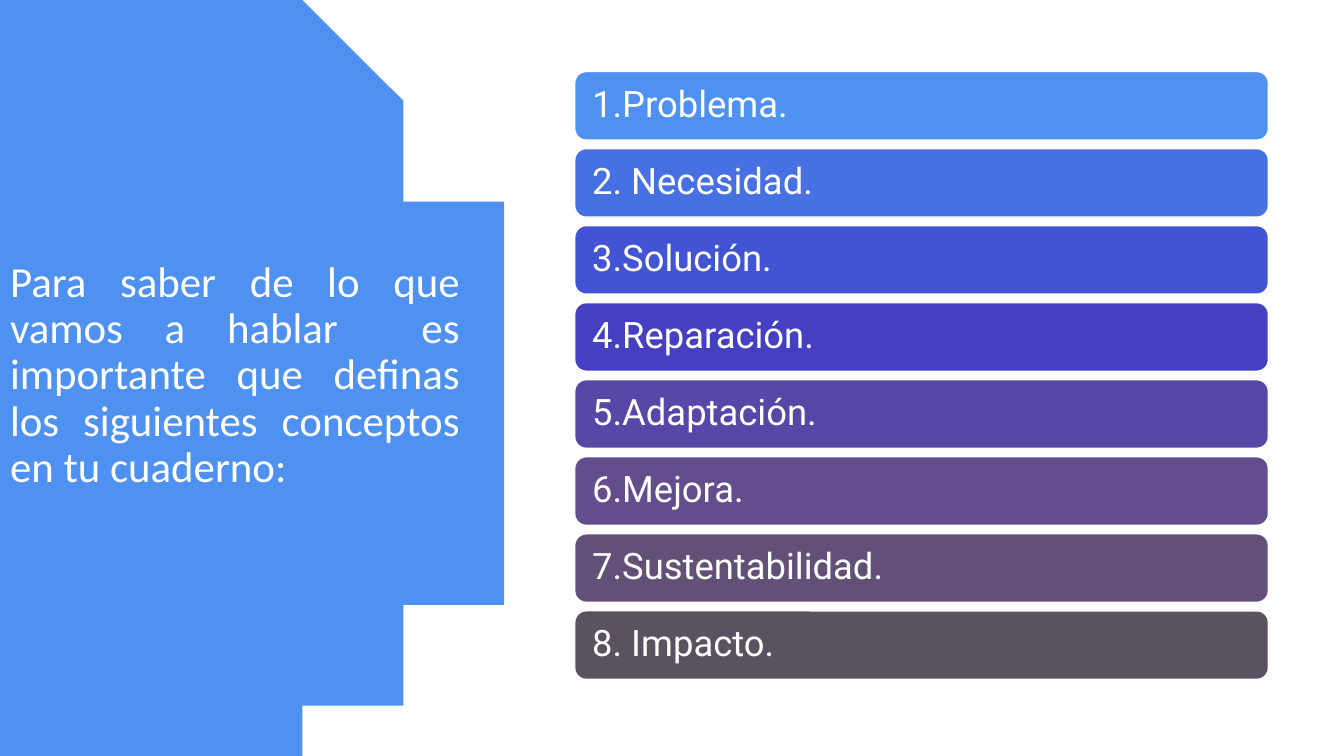
import math

from pptx import Presentation
from pptx import util as u
from pptx.dml.color import RGBColor
from pptx.enum import shapes, text

COLORS = {
    "white": "FFFFFF",
    "sky": "4E91F0",
    "blue": "4770E3",
    "royal": "4253D4",
    "indigo": "4540C2",
    "violet": "5947A7",
    "purple": "634D8D",
    "plum": "635076",
    "slate": "5B5260",
}

CONCEPTS = [
    ("1.Problema.", "sky"),
    ("2. Necesidad.", "blue"),
    ("3.Solución.", "royal"),
    ("4.Reparación.", "indigo"),
    ("5.Adaptación.", "violet"),
    ("6.Mejora.", "purple"),
    ("7.Sustentabilidad.", "plum"),
    ("8. Impacto.", "slate"),
]


class ConceptSlide:
    title_font = {"name": "Calibri", "size": u.Pt(30.6), "bold": False}
    bar_font = {"name": "Roboto", "size": u.Pt(26)}

    def __init__(self, prs):
        self.slide = prs.slides.add_slide(prs.slide_layouts[5])

    def color(self, name):
        return RGBColor.from_string(COLORS[name])

    def paint(self, sp, fill, line=None):
        sp.shadow.inherit = False
        sp.fill.solid()
        sp.fill.fore_color.rgb = self.color(fill)
        if line:
            sp.line.color.rgb = self.color(line)
            sp.line.width = u.Pt(1)
        else:
            sp.line.fill.background()

    def label(self, sp, words, font, align, frame):
        tf = sp.text_frame
        frame = {
            "word_wrap": True,
            "auto_size": text.MSO_AUTO_SIZE.NONE,
            "vertical_anchor": text.MSO_ANCHOR.MIDDLE,
            **frame,
        }
        for key, value in frame.items():
            setattr(tf, key, value)
        p = tf.paragraphs[0]
        p.alignment = align
        p.line_spacing = 0.9
        r = p.add_run()
        r.text = words
        for key, value in font.items():
            setattr(r.font, key, value)
        r.font.color.rgb = self.color("white")

    def disc(self, center_x, center_y, radius, steps=120):
        limit = math.asin(center_y / radius)
        angles = [limit * (2 * i / steps - 1) for i in range(steps + 1)]
        arc = [
            (center_x + radius * math.cos(a), center_y + radius * math.sin(a))
            for a in angles
        ]
        builder = self.slide.shapes.build_freeform(0, 0, scale=u.Inches(1))
        builder.add_line_segments(arc + [(0, 2 * center_y)], close=True)
        self.paint(builder.convert_to_shape(), "sky")

    def title(self, words, left, top, width, height):
        sp = self.slide.shapes.title
        box = {"left": left, "top": top, "width": width, "height": height}
        for key, value in box.items():
            setattr(sp, key, u.Inches(value))
        self.label(sp, words, self.title_font, text.PP_ALIGN.JUSTIFY, {})
        tree = self.slide.shapes.element
        tree.append(sp.element)

    def bar(self, words, fill, left, top, width, height):
        sp = self.slide.shapes.add_shape(
            shapes.MSO_SHAPE.ROUNDED_RECTANGLE,
            *map(u.Inches, (left, top, width, height)),
        )
        self.paint(sp, fill, "white")
        frame = {"margin_left": u.Inches(0.14), "margin_right": u.Inches(0.14)}
        self.label(sp, words, self.bar_font, text.PP_ALIGN.LEFT, frame)


def main():
    prs = Presentation()
    prs.slide_width = u.Inches(13.33)
    prs.slide_height = u.Inches(7.5)
    s = ConceptSlide(prs)
    s.disc(0.53, 3.75, 4.4)
    s.title(
        "Para saber de lo que vamos a hablar  es importante que definas "
        "los siguientes conceptos en tu cuaderno:",
        0, 1.95, 4.66, 3.56,
    )
    first_top, last_top = 0.71, 6.06
    pitch = (last_top - first_top) / (len(CONCEPTS) - 1)
    for i, (words, fill) in enumerate(CONCEPTS):
        s.bar(words, fill, 5.7, first_top + i * pitch, 6.88, 0.68)
    prs.save("out.pptx")


if __name__ == "__main__":
    main()
